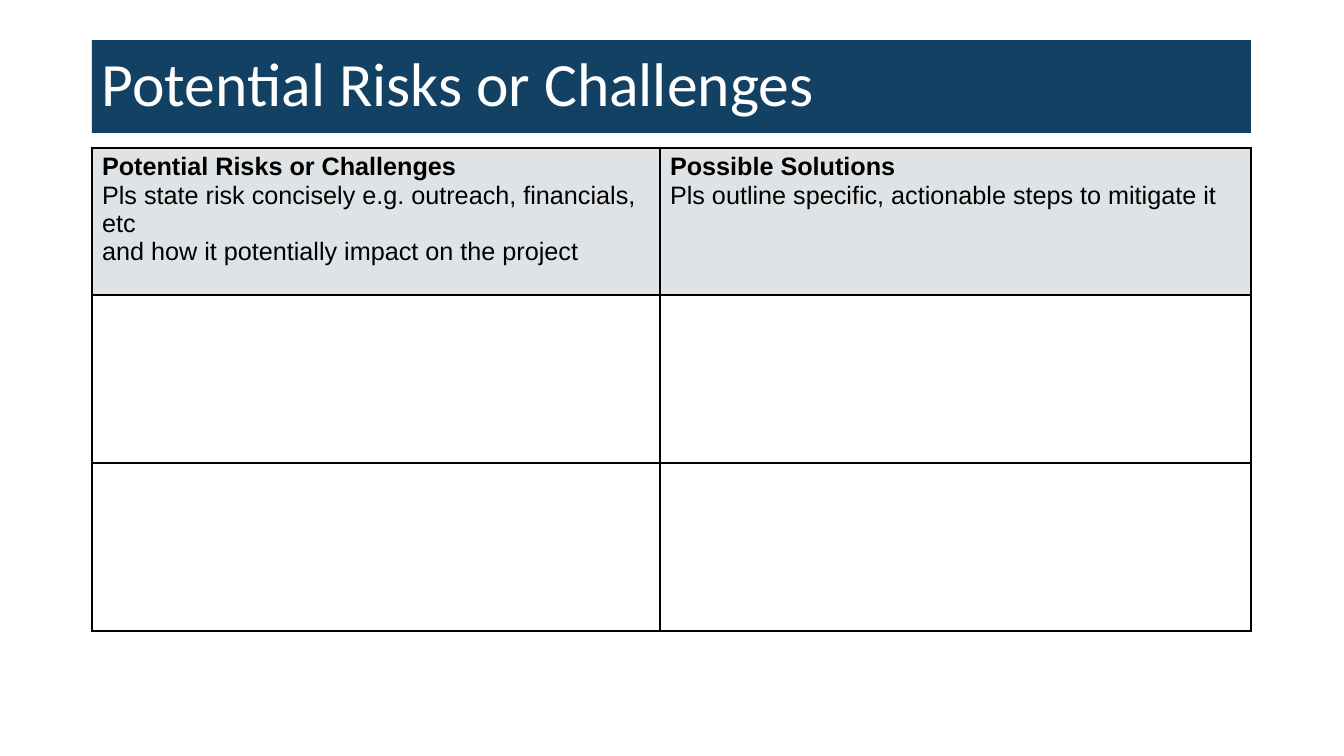
from dataclasses import dataclass

from lxml import etree
from pptx import Presentation
from pptx.dml.color import RGBColor
from pptx.enum.shapes import MSO_SHAPE
from pptx.enum.text import MSO_ANCHOR, PP_ALIGN
from pptx.oxml.ns import qn
from pptx.util import Emu, Pt

RECTANGLE = MSO_SHAPE.RECTANGLE
LEFT = PP_ALIGN.LEFT
MIDDLE = MSO_ANCHOR.MIDDLE

PX_PER_INCH = 100.8
PAGE_WIDTH, PAGE_HEIGHT = 1344, 756
MARGIN, CONTENT_WIDTH = 92, 1159
TITLE_TOP, TITLE_HEIGHT = 40, 93
TABLE_TOP = 148
ROW_HEIGHTS = (147, 168, 168)

NAVY, GREY, WHITE, BLACK = "134163", "DFE3E5", "FFFFFF", "000000"


@dataclass(frozen=True)
class Column:
    width: int
    heading: str
    hints: tuple[str, ...]


COLUMNS = (
    Column(568, "Potential Risks or Challenges", (
        "Pls state risk concisely e.g. outreach, financials, etc",
        "and how it potentially impact on the project",
    )),
    Column(591, "Possible Solutions", (
        "Pls outline specific, actionable steps to mitigate it",
    )),
)


def px(length: int) -> Emu:
    return Emu(round(length * 914400 / PX_PER_INCH))


def color(value: str) -> RGBColor:
    return RGBColor.from_string(value)


def paint(target, value: str) -> None:
    target.fill.solid()
    target.fill.fore_color.rgb = color(value)


def style_text(para, font_name: str, size: int, value: str, bold: bool = False) -> None:
    para.alignment = LEFT
    for span in para.runs:
        span.font.name = font_name
        span.font.size = Pt(size)
        span.font.bold = bold
        span.font.color.rgb = color(value)


def add_borders(cell) -> None:
    """Outline a cell; call before filling it, since lines precede fills in the XML."""
    properties = cell._tc.get_or_add_tcPr()
    for side in ("lnL", "lnR", "lnT", "lnB"):
        line = etree.SubElement(properties, qn(f"a:{side}"), w=str(Pt(1)))
        solid = etree.SubElement(line, qn("a:solidFill"))
        etree.SubElement(solid, qn("a:srgbClr"), val=BLACK)


def add_title(page, text: str) -> None:
    box = page.shapes.add_shape(RECTANGLE, px(MARGIN), px(TITLE_TOP),
                                px(CONTENT_WIDTH), px(TITLE_HEIGHT))
    box.shadow.inherit = False
    paint(box, NAVY)
    box.line.fill.background()
    frame = box.text_frame
    frame.word_wrap = True
    frame.vertical_anchor = MIDDLE
    frame.text = text
    para = frame.paragraphs[0]
    para.line_spacing = 0.9
    style_text(para, "Calibri", 44, WHITE)


def add_risk_table(page) -> None:
    table = page.shapes.add_table(len(ROW_HEIGHTS), len(COLUMNS), px(MARGIN), px(TABLE_TOP),
                                  px(CONTENT_WIDTH), px(sum(ROW_HEIGHTS))).table
    table.horz_banding = False
    for row, height in zip(table.rows, ROW_HEIGHTS):
        row.height = px(height)
    for index, column in enumerate(COLUMNS):
        table.columns[index].width = px(column.width)
        for row_index in range(len(ROW_HEIGHTS)):
            cell = table.cell(row_index, index)
            add_borders(cell)
            paint(cell, WHITE if row_index else GREY)
        frame = table.cell(0, index).text_frame
        frame.text = "\n".join((column.heading, *column.hints))
        for line_index, para in enumerate(frame.paragraphs):
            style_text(para, "Arial", 18, BLACK, bold=line_index == 0)


def main() -> None:
    deck = Presentation()
    deck.slide_width, deck.slide_height = px(PAGE_WIDTH), px(PAGE_HEIGHT)
    page = deck.slides.add_slide(deck.slide_layouts[6])
    paint(page.background, WHITE)
    add_title(page, "Potential Risks or Challenges")
    add_risk_table(page)
    deck.save("out.pptx")


if __name__ == "__main__":
    main()
